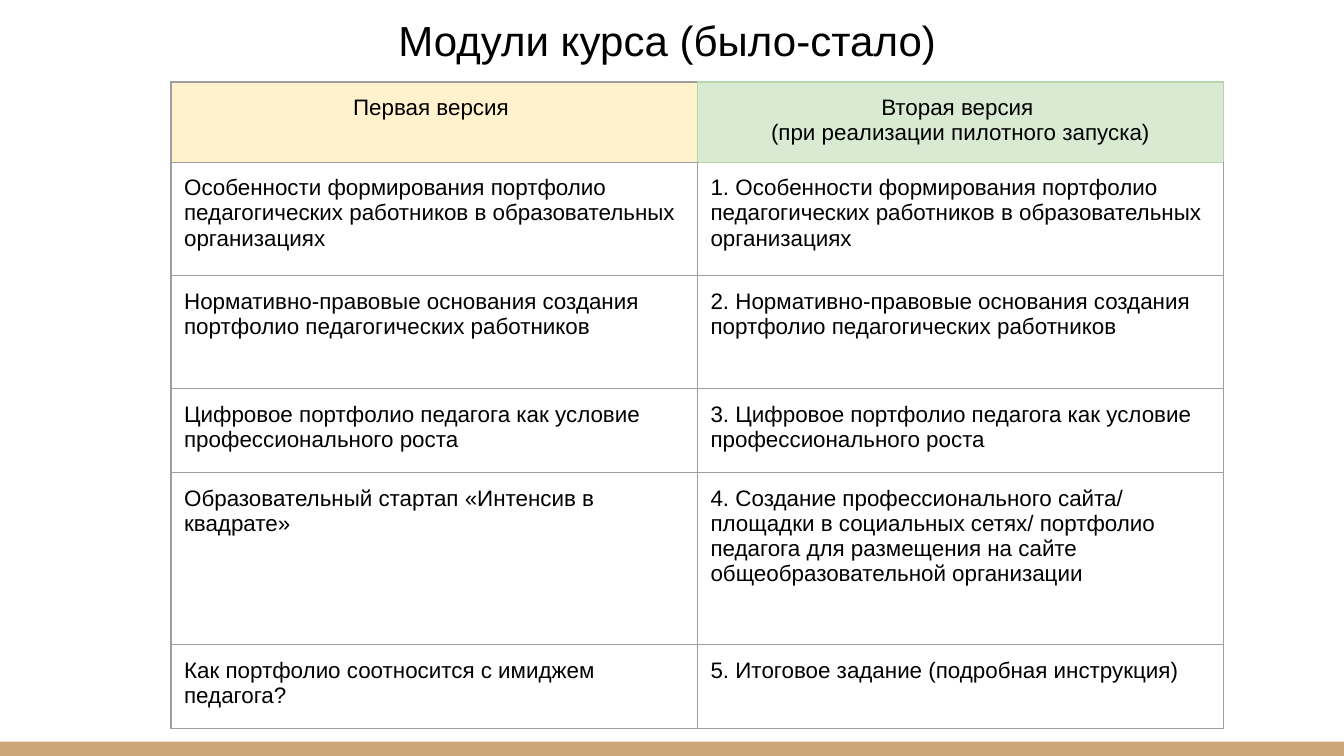
"""Build a slide comparing the course modules before and after the pilot launch."""
from lxml import etree
from pptx import Presentation
from pptx.dml.color import RGBColor
from pptx.enum.shapes import MSO_SHAPE
from pptx.enum.text import MSO_ANCHOR, PP_ALIGN
from pptx.oxml.ns import qn
from pptx.util import Cm, Pt

RECTANGLE = MSO_SHAPE.RECTANGLE
BOTTOM = MSO_ANCHOR.BOTTOM
CENTER, LEFT = PP_ALIGN.CENTER, PP_ALIGN.LEFT
BLACK = RGBColor(0x00, 0x00, 0x00)
TAN = RGBColor(0xCC, 0xA6, 0x77)
CREAM = RGBColor(0xFF, 0xF2, 0xCC)
MINT = RGBColor(0xD9, 0xEA, 0xD3)
GREEN = RGBColor(0xB6, 0xD7, 0xA8)
GRAY = RGBColor(0x9E, 0x9E, 0x9E)
INSET = Cm(0.25)

HEADERS = [["Первая версия "], ["Вторая версия ", "(при реализации пилотного запуска)"]]
MODULES = [
    ("Особенности формирования портфолио педагогических работников в образовательных организациях",
     "1. Особенности формирования портфолио педагогических работников в образовательных организациях"),
    ("Нормативно-правовые основания создания портфолио педагогических работников",
     "2. Нормативно-правовые основания создания портфолио педагогических работников"),
    ("Цифровое портфолио педагога как условие профессионального роста",
     "3. Цифровое портфолио педагога как условие профессионального роста"),
    ("Образовательный стартап «Интенсив в квадрате»",
     "4. Создание профессионального сайта/ площадки в социальных сетях/ портфолио педагога "
     "для размещения на сайте общеобразовательной организации"),
    ("Как портфолио соотносится с имиджем педагога?",
     "5. Итоговое задание (подробная инструкция)"),
]
ROW_HEIGHTS = [1.48, 2.14, 2.14, 1.59, 3.25, 1.59]
COLUMN_WIDTH = 9.95


def add_span(para, text, size):
    span = para.add_run()
    span.text = text
    span.font.name = "Arial"
    span.font.size = Pt(size)
    span.font.color.rgb = BLACK


def set_borders(cell, colors):
    properties = cell._tc.get_or_add_tcPr()
    for side, color in zip("LRTB", colors):
        line = etree.SubElement(properties, qn(f"a:ln{side}"), w=str(Pt(0.75)))
        fill = etree.SubElement(line, qn("a:solidFill"))
        etree.SubElement(fill, qn("a:srgbClr"), val=str(color))


deck = Presentation()
deck.slide_width, deck.slide_height = Cm(25.4), Cm(14.29)
page = deck.slides.add_slide(deck.slide_layouts[6])

strip = page.shapes.add_shape(RECTANGLE, 0, Cm(14.02), deck.slide_width, Cm(0.27))
strip.shadow.inherit = False
strip.fill.solid()
strip.fill.fore_color.rgb = TAN
strip.line.fill.background()

title = page.shapes.add_textbox(Cm(0.94), 0, Cm(23.67), Cm(1.55))
frame = title.text_frame
frame.word_wrap = True
frame.vertical_anchor = BOTTOM
frame.margin_left = frame.margin_right = frame.margin_top = frame.margin_bottom = INSET
para = frame.paragraphs[0]
para.alignment = CENTER
add_span(para, "Модули курса (было-стало)", 22.5)
add_span(para, " ", 32.4)

rows = [HEADERS] + [[[before], [after]] for before, after in MODULES]
table = page.shapes.add_table(len(rows), 2, Cm(3.23), Cm(1.55),
                              Cm(2 * COLUMN_WIDTH), Cm(sum(ROW_HEIGHTS))).table
table.first_row = table.horz_banding = False
for column in table.columns:
    column.width = Cm(COLUMN_WIDTH)

for row_index, (row, height) in enumerate(zip(rows, ROW_HEIGHTS)):
    table.rows[row_index].height = Cm(height)
    for column_index, lines in enumerate(row):
        cell = table.cell(row_index, column_index)
        cell.margin_left = cell.margin_right = cell.margin_top = cell.margin_bottom = INSET
        borders = [GRAY] * 4
        if row_index == 0:
            borders = [GREEN] * 4 if column_index else [GRAY, GREEN, GRAY, GRAY]
        elif row_index == 1 and column_index == 1:
            borders[2] = GREEN
        set_borders(cell, borders)
        if row_index == 0:
            cell.fill.solid()
            cell.fill.fore_color.rgb = MINT if column_index else CREAM
        else:
            cell.fill.background()
        for line_index, text in enumerate(lines):
            frame = cell.text_frame
            para = frame.add_paragraph() if line_index else frame.paragraphs[0]
            para.alignment = LEFT if row_index else CENTER
            add_span(para, text, 12)

deck.save("out.pptx")
